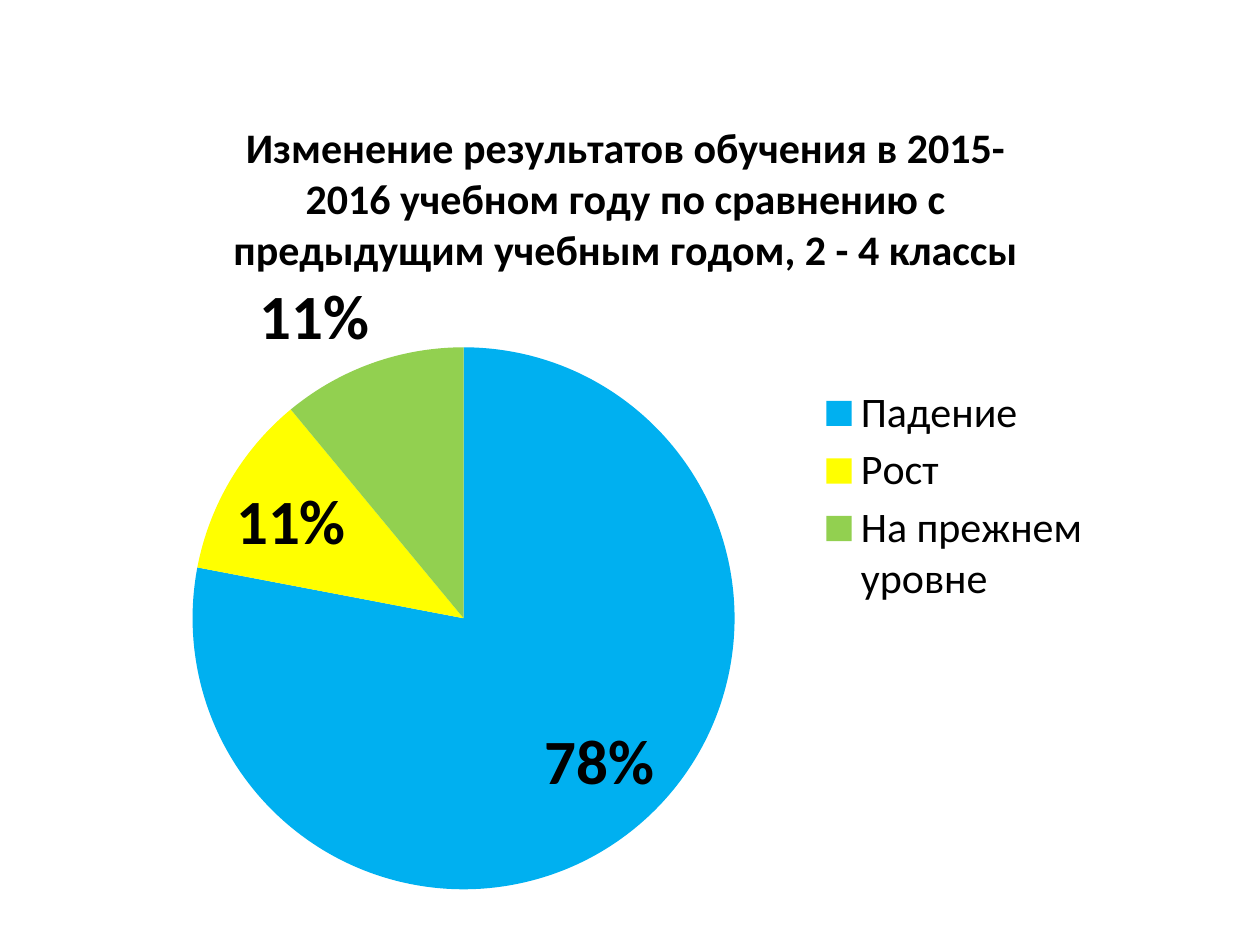
"""Build a slide with a pie chart of changes in learning results."""
from dataclasses import dataclass
from typing import Any

import lxml.etree
import pptx
import pptx.chart.data
import pptx.dml.color
import pptx.enum.chart
import pptx.oxml.ns
import pptx.util

BLACK = pptx.dml.color.RGBColor(0x00, 0x00, 0x00)
BLUE = pptx.dml.color.RGBColor(0x00, 0xB0, 0xF0)
YELLOW = pptx.dml.color.RGBColor(0xFF, 0xFF, 0x00)
GREEN = pptx.dml.color.RGBColor(0x92, 0xD0, 0x50)

TITLE = (
    "Изменение результатов обучения в 2015-2016 учебном году "
    "по сравнению с предыдущим учебным годом, 2 - 4 классы"
)
TITLE_FORMAT = {"size": pptx.util.Pt(24), "bold": True}
LEGEND_FORMAT = {"size": pptx.util.Pt(24), "bold": False}
LABEL_FORMAT = {"size": pptx.util.Pt(36), "bold": True}


@dataclass(frozen=True)
class Slice:
    """One category of the pie."""

    name: str
    percent: int
    color: pptx.dml.color.RGBColor


SLICES = [
    Slice("Падение", 78, BLUE),
    Slice("Рост", 11, YELLOW),
    Slice("На прежнем уровне", 11, GREEN),
]


def format_font(font: Any, values: dict[str, Any]) -> None:
    """Apply the shared typeface and the given values to a font."""
    for name, value in {"name": "Calibri", **values}.items():
        setattr(font, name, value)
    font.color.rgb = BLACK


def set_layout(parent: Any, before: str, **values: Any) -> None:
    """Place a chart part by fractions of the chart, ahead of a named sibling."""
    qn = pptx.oxml.ns.qn
    for old in parent.findall(qn("c:layout")):
        parent.remove(old)
    layout = parent.makeelement(qn("c:layout"))
    manual = lxml.etree.SubElement(layout, qn("c:manualLayout"))
    for name, value in values.items():
        lxml.etree.SubElement(manual, qn(f"c:{name}")).set("val", str(value))
    parent.find(qn(before)).addprevious(layout)


def add_pie(slide: Any, slices: list[Slice]) -> None:
    """Add the pie chart with its title, legend and labels."""
    data = pptx.chart.data.CategoryChartData()
    data.categories = [item.name for item in slices]
    data.add_series("Series 1", [item.percent for item in slices])
    box = [pptx.util.Cm(length) for length in (1.9, 1.93, 20.4, 16)]
    chart = slide.shapes.add_chart(
        pptx.enum.chart.XL_CHART_TYPE.PIE, *box, data
    ).chart

    chart.has_title = True
    title_frame = chart.chart_title.text_frame
    title_frame.text = TITLE
    format_font(title_frame.paragraphs[0].runs[0].font, TITLE_FORMAT)
    chart.chart_title.include_in_layout = False

    chart.has_legend = True
    legend = chart.legend
    legend.position = pptx.enum.chart.XL_LEGEND_POSITION.RIGHT
    legend.include_in_layout = False
    format_font(legend.font, LEGEND_FORMAT)

    plot = chart.plots[0]
    plot.vary_by_categories = True
    for index, item in enumerate(slices):
        fill = plot.series[0].points[index].format.fill
        fill.solid()
        fill.fore_color.rgb = item.color

    plot.has_data_labels = True
    labels = plot.data_labels
    label_values = {
        "show_percentage": True,
        "show_value": False,
        "number_format": "0%",
        "number_format_is_linked": False,
        "position": pptx.enum.chart.XL_LABEL_POSITION.BEST_FIT,
    }
    for name, value in label_values.items():
        setattr(labels, name, value)
    format_font(labels.font, LABEL_FORMAT)

    edges = {"xMode": "edge", "yMode": "edge"}
    plot_area = chart.element.chart.plotArea
    set_layout(plot_area, "c:pieChart", layoutTarget="inner", **edges,
               x=0.078, y=0.317, w=0.574, h=0.683)
    set_layout(legend._element, "c:overlay", **edges, x=0.71, y=0.36, w=0.28, h=0.29)
    set_layout(chart.chart_title._element, "c:overlay", **edges, x=0.13, y=0.02)


def main() -> None:
    """Create and save the presentation."""
    presentation = pptx.Presentation()
    presentation.slide_width = pptx.util.Cm(25.4)
    presentation.slide_height = pptx.util.Cm(19.05)
    slide = presentation.slides.add_slide(presentation.slide_layouts[6])
    add_pie(slide, SLICES)
    presentation.save("out.pptx")


if __name__ == "__main__":
    main()
